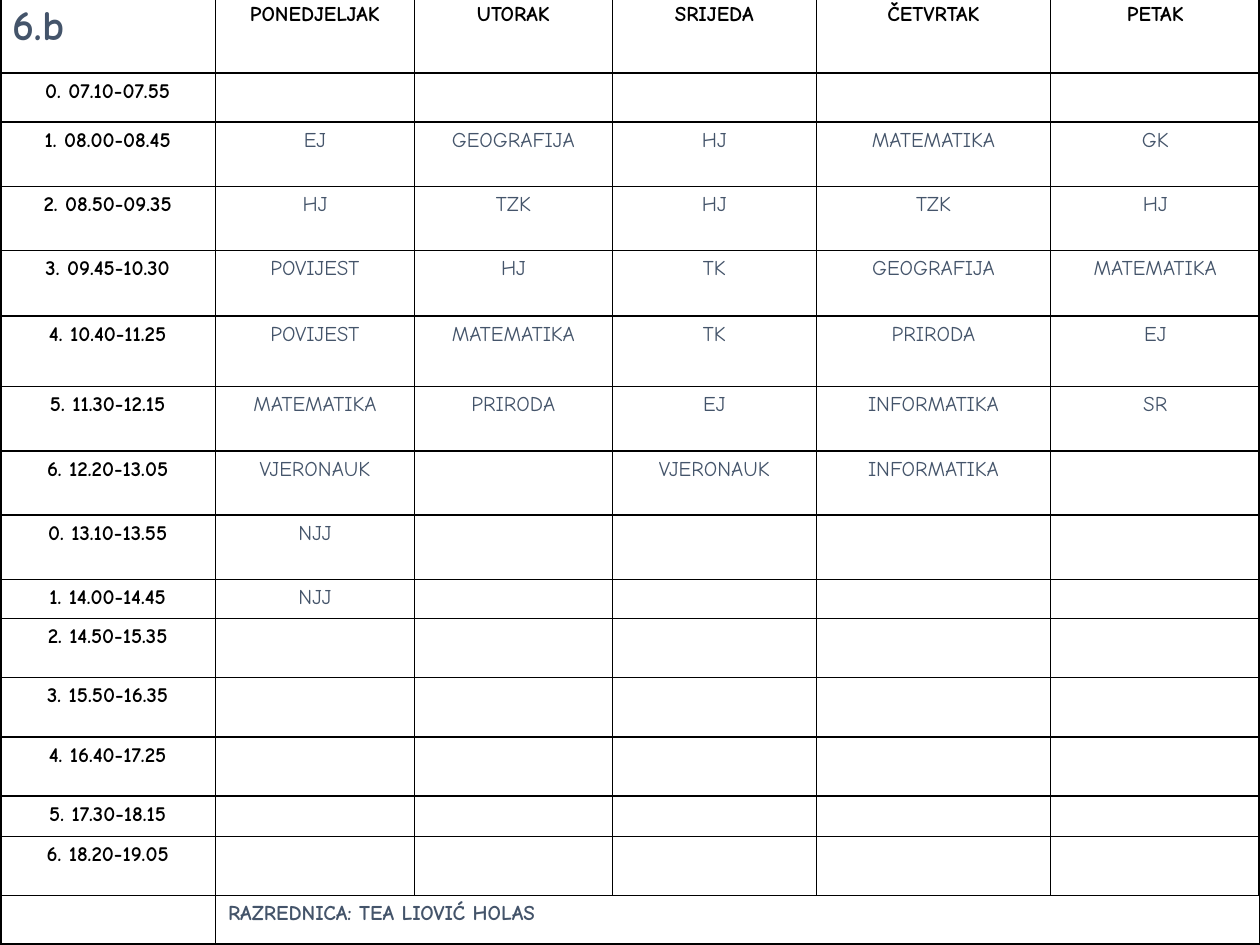
from lxml import etree
from pptx import Presentation
from pptx.dml.color import RGBColor
from pptx.enum.text import PP_ALIGN
from pptx.oxml.ns import qn
from pptx.util import Inches, Pt

LEFT, CENTER = PP_ALIGN.LEFT, PP_ALIGN.CENTER
FONT = "Comic Neue"
COLORS = {"ink": "000000", "slate": "44546A"}
THIN, THICK = 1, 2.25

CLASS_NAME = "6.b"
DAYS = ["PONEDJELJAK", "UTORAK", "SRIJEDA", "ČETVRTAK", "PETAK"]
LESSONS = [
    ("0. 07.10-07.55", []),
    ("1. 08.00-08.45", ["EJ", "GEOGRAFIJA", "HJ", "MATEMATIKA", "GK"]),
    ("2. 08.50-09.35", ["HJ", "TZK", "HJ", "TZK", "HJ"]),
    ("3. 09.45-10.30", ["POVIJEST", "HJ", "TK", "GEOGRAFIJA", "MATEMATIKA"]),
    ("4. 10.40-11.25", ["POVIJEST", "MATEMATIKA", "TK", "PRIRODA", "EJ"]),
    ("5. 11.30-12.15", ["MATEMATIKA", "PRIRODA", "EJ", "INFORMATIKA", "SR"]),
    ("6. 12.20-13.05", ["VJERONAUK", "", "VJERONAUK", "INFORMATIKA", ""]),
    ("0. 13.10-13.55", ["NJJ"]),
    ("1. 14.00-14.45", ["NJJ"]),
    ("2. 14.50-15.35", []),
    ("3. 15.50-16.35", []),
    ("4. 16.40-17.25", []),
    ("5. 17.30-18.15", []),
    ("6. 18.20-19.05", []),
]
TEACHER = "RAZREDNICA: TEA LIOVIĆ HOLAS"

COLUMN_WIDTHS = [1.71, 1.58, 1.57, 1.62, 1.86, 1.66]
ROW_HEIGHTS = [0.61, 0.39, 0.51, 0.51, 0.52, 0.56, 0.51, 0.51,
               0.51, 0.31, 0.47, 0.47, 0.47, 0.32, 0.47, 0.39]
LAST_ROW, LAST_COLUMN = len(ROW_HEIGHTS) - 1, len(COLUMN_WIDTHS) - 1


def write(cell, text, color, bold=True, size=12, align=CENTER):
    cell.text_frame.text = text
    para = cell.text_frame.paragraphs[0]
    para.alignment = align
    for span in para.runs:
        span.font.name = FONT
        span.font.size = Pt(size)
        span.font.bold = bold
        span.font.color.rgb = RGBColor.from_string(COLORS[color])
    if not text:
        etree.SubElement(para._p, qn("a:endParaRPr"), sz=str(size * 100))


def draw_borders(cell, row, column):
    outer = {"lnL": column == 0, "lnR": column == LAST_COLUMN,
             "lnT": row == 0, "lnB": row == LAST_ROW}
    properties = cell._tc.get_or_add_tcPr()
    for side, is_outer in outer.items():
        width = Pt(THICK if is_outer else THIN)
        line = etree.SubElement(properties, qn(f"a:{side}"), w=str(width))
        fill = etree.SubElement(line, qn("a:solidFill"))
        etree.SubElement(fill, qn("a:srgbClr"), val=COLORS["ink"])


def main():
    deck = Presentation()
    deck.slide_width, deck.slide_height = Inches(10), Inches(7.5)
    page = deck.slides.add_slide(deck.slide_layouts[6])
    timetable = page.shapes.add_table(
        len(ROW_HEIGHTS), len(COLUMN_WIDTHS),
        Inches(0), Inches(-0.03), Inches(10), Inches(7.53)).table
    timetable.first_row = timetable.horz_banding = False
    for column, width in zip(timetable.columns, COLUMN_WIDTHS):
        column.width = Inches(width)
    for row, height in zip(timetable.rows, ROW_HEIGHTS):
        row.height = Inches(height)

    for row in range(LAST_ROW + 1):
        for column in range(LAST_COLUMN + 1):
            cell = timetable.cell(row, column)
            draw_borders(cell, row, column)
            cell.fill.background()
            write(cell, "", "ink")

    write(timetable.cell(0, 0), CLASS_NAME, "slate", size=24, align=LEFT)
    for column, day in enumerate(DAYS, 1):
        write(timetable.cell(0, column), day, "ink")
    for row, (time, subjects) in enumerate(LESSONS, 1):
        write(timetable.cell(row, 0), time, "ink")
        for column, subject in enumerate(subjects, 1):
            if subject:
                write(timetable.cell(row, column), subject, "slate", bold=False)

    footer = timetable.cell(LAST_ROW, 1)
    footer.merge(timetable.cell(LAST_ROW, LAST_COLUMN))
    write(footer, TEACHER, "slate", align=LEFT)
    deck.save("out.pptx")


if __name__ == "__main__":
    main()
